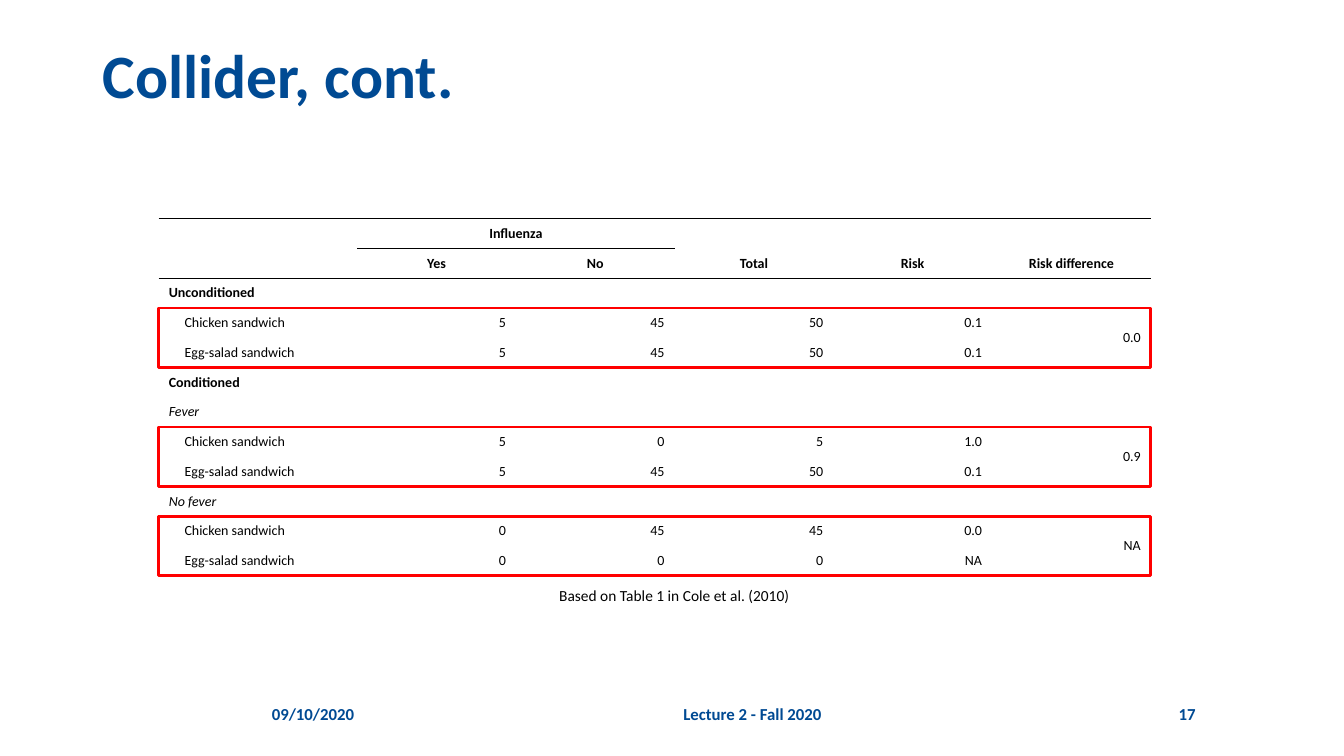
from dataclasses import dataclass

from lxml.etree import SubElement
from pptx import Presentation
from pptx.dml.color import RGBColor
from pptx.enum.shapes import MSO_SHAPE
from pptx.enum.text import MSO_ANCHOR as Anchor, PP_ALIGN as Align
from pptx.oxml.ns import qn
from pptx.util import Cm, Pt


@dataclass(frozen=True)
class Theme:
    font: str = "Calibri"
    blue: RGBColor = RGBColor(0x00, 0x4A, 0x93)
    black: RGBColor = RGBColor(0x00, 0x00, 0x00)
    red: RGBColor = RGBColor(0xFF, 0x00, 0x00)
    title: Pt = Pt(44)
    footer: Pt = Pt(12)
    caption: Pt = Pt(11)
    table: Pt = Pt(10)


theme = Theme()


def write(tf, text, size, color, align=Align.LEFT, bold=False, italic=False):
    tf.text = text
    p = tf.paragraphs[0]
    p.alignment = align
    for r in p.runs:
        r.font.name, r.font.size = theme.font, size
        r.font.bold, r.font.italic = bold, italic
        r.font.color.rgb = color
    if not text:  # keeps an empty cell from stretching its row
        SubElement(p._p, qn("a:endParaRPr"), sz=str(int(size.pt * 100)))


def rule(cell, side):
    """Draw a black line on one side of a table cell: T or B."""
    ln = SubElement(cell._tc.get_or_add_tcPr(), qn(f"a:ln{side}"), w=str(Pt(1)))
    fill = SubElement(ln, qn("a:solidFill"))
    SubElement(fill, qn("a:srgbClr"), val=str(theme.black))


prs = Presentation()
prs.slide_width, prs.slide_height = Cm(33.87), Cm(19.05)
s = prs.slides.add_slide(prs.slide_layouts[5])

# Title
title = s.shapes.title
title.left, title.top, title.width, title.height = Cm(2.33), Cm(1.01), Cm(29.21), Cm(3.68)
tf = title.text_frame
tf.vertical_anchor = Anchor.TOP
write(tf, "Collider, cont.", theme.title, theme.blue, bold=True)
tf.paragraphs[0].line_spacing = 0.9

# Risk table
CHICKEN, EGG = "Chicken sandwich", "Egg-salad sandwich"
rows = [
    ["", "Influenza"],
    ["", "Yes", "No", "Total", "Risk", "Risk difference"],
    ["Unconditioned"],
    [CHICKEN, "5", "45", "50", "0.1", "0.0"],
    [EGG, "5", "45", "50", "0.1"],
    ["Conditioned"],
    ["Fever"],
    [CHICKEN, "5", "0", "5", "1.0", "0.9"],
    [EGG, "5", "45", "50", "0.1"],
    ["No fever"],
    [CHICKEN, "0", "45", "45", "0.0", "NA"],
    [EGG, "0", "0", "0", "NA"],
]
HEADER_ROWS, COLS = 2, 6
LEFT, TOP, WIDTH, ROW_H = 4.0, 5.51, 25.0, 0.75
pair_rows = [i for i, row in enumerate(rows) if row[0] == CHICKEN]

frame = s.shapes.add_table(len(rows), COLS, Cm(LEFT), Cm(TOP), Cm(WIDTH), Cm(ROW_H * len(rows)))
table = frame.table
table.first_row = table.horz_banding = False
table._tbl.tblPr.find(qn("a:tableStyleId")).text = "{2D5ABB26-0587-4C30-8999-92F81FD0307C}"
for j, col in enumerate(table.columns):
    col.width = Cm(4 if j else 5)
for row in table.rows:
    row.height = Cm(ROW_H)

# Top line, line under Influenza, line under the header, bottom line
last = len(rows) - 1
for i, side, cols in [(0, "T", range(COLS)), (1, "T", (1, 2)), (2, "T", range(COLS)),
                      (0, "B", (1, 2)), (1, "B", range(COLS)), (last, "B", range(COLS))]:
    for j in cols:
        rule(table.cell(i, j), side)

for i, row in enumerate(rows):
    for j in range(COLS):
        cell = table.cell(i, j)
        header = i < HEADER_ROWS
        align = Align.LEFT if j == 0 else Align.CENTER if header else Align.RIGHT
        write(cell.text_frame, row[j] if j < len(row) else "", theme.table, theme.black, align,
              bold=header or row[0].endswith("onditioned"), italic=row[0].lower().endswith("fever"))
        cell.vertical_anchor = Anchor.MIDDLE
        cell.fill.background()
        if row[0] in (CHICKEN, EGG) and j == 0:
            cell.margin_left = Cm(0.65)

table.cell(0, 1).merge(table.cell(0, 2))
for i in pair_rows:
    table.cell(i, COLS - 1).merge(table.cell(i + 1, COLS - 1))

# Footer and table caption
for text, left, top, width, height, size, color, align in [
    ("09/10/2020", 6.6, 17.47, 3.33, 1.01, theme.footer, theme.blue, Align.LEFT),
    ("Lecture 2 - Fall 2020", 10.34, 17.47, 17.25, 1.01, theme.footer, theme.blue, Align.CENTER),
    ("17", 27.99, 17.47, 2.39, 1.01, theme.footer, theme.blue, Align.RIGHT),
    ("Based on Table 1 in Cole et al. (2010)", 13.49, 14.5, 7.01, 0.99,
     theme.caption, theme.black, Align.CENTER),
]:
    tf = s.shapes.add_textbox(Cm(left), Cm(top), Cm(width), Cm(height)).text_frame
    tf.word_wrap = True
    tf.vertical_anchor = Anchor.MIDDLE
    write(tf, text, size, color, align, bold=size == theme.footer)

# Red frame around each pair of sandwich rows
for i in pair_rows:
    sp = s.shapes.add_shape(MSO_SHAPE.RECTANGLE, Cm(LEFT), Cm(TOP + i * ROW_H), Cm(WIDTH), Cm(2 * ROW_H))
    sp.shadow.inherit = False
    sp.fill.background()
    sp.line.color.rgb = theme.red
    sp.line.width = Pt(2)

prs.save("out.pptx")
